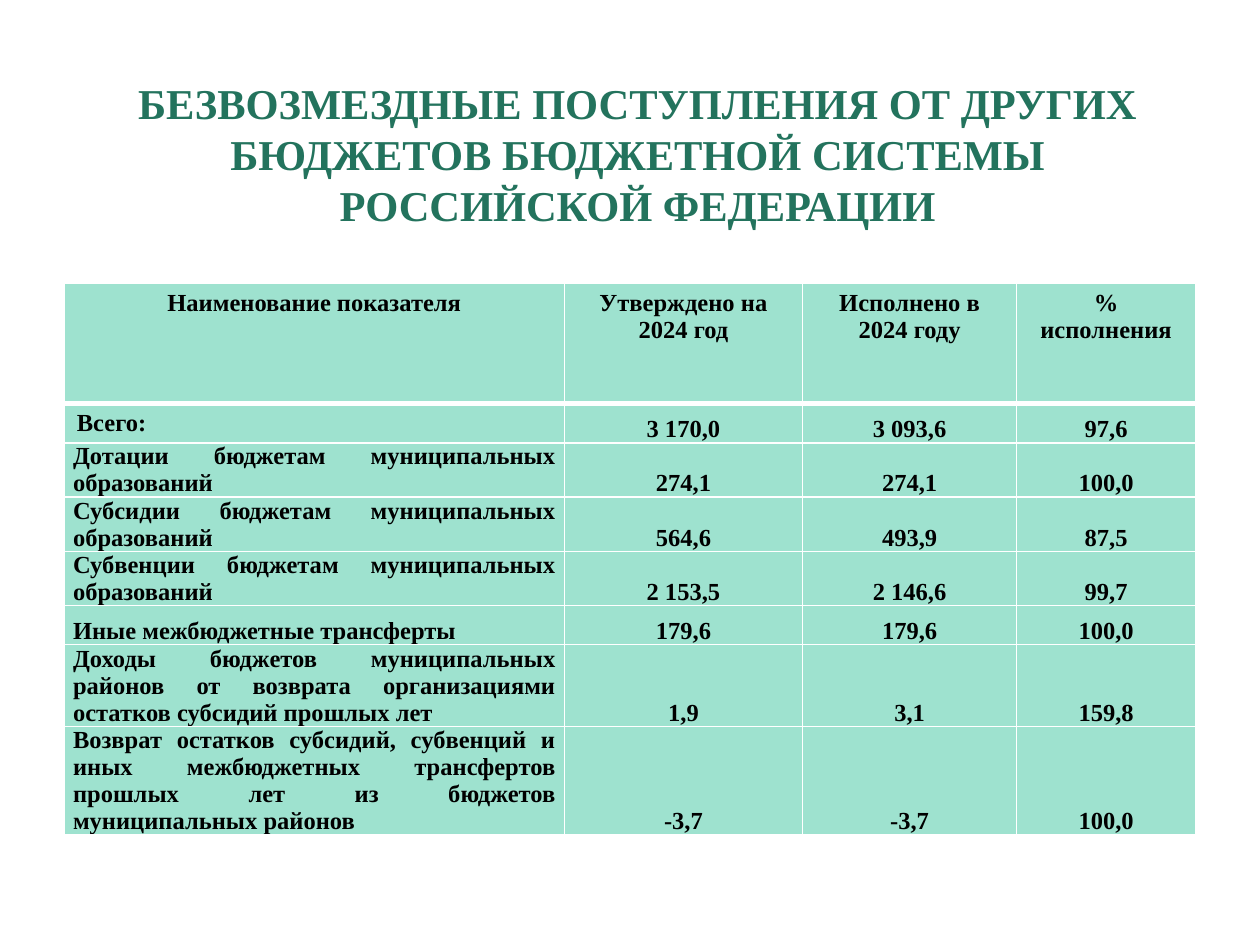
from typing import NamedTuple

from lxml import etree
from pptx import Presentation
from pptx.dml.color import RGBColor
from pptx.enum.text import MSO_ANCHOR, PP_ALIGN
from pptx.oxml.ns import qn
from pptx.util import Inches, Pt

CENTER, JUSTIFY, LEFT = PP_ALIGN.CENTER, PP_ALIGN.JUSTIFY, PP_ALIGN.LEFT
TOP, MIDDLE, BOTTOM = MSO_ANCHOR.TOP, MSO_ANCHOR.MIDDLE, MSO_ANCHOR.BOTTOM
TITLE_ONLY = 5
FONT = "Times New Roman"
COLORS = {"title": "23735D", "cell": "9EE2CF", "text": "000000", "border": "FFFFFF"}
COLUMN_WIDTHS = (3.97, 1.89, 1.7, 1.42)
TITLE = "БЕЗВОЗМЕЗДНЫЕ ПОСТУПЛЕНИЯ ОТ ДРУГИХ БЮДЖЕТОВ БЮДЖЕТНОЙ СИСТЕМЫ РОССИЙСКОЙ ФЕДЕРАЦИИ"


class BudgetRow(NamedTuple):
    height: float
    texts: tuple[str, str, str, str]


ROWS = (
    BudgetRow(0.95, ("Наименование показателя", "Утверждено на 2024 год",
                     "Исполнено в 2024 году", "% исполнения")),
    BudgetRow(0.31, ("Всего:", "3 170,0", "3 093,6", "97,6")),
    BudgetRow(0.43, ("Дотации бюджетам муниципальных образований", "274,1", "274,1", "100,0")),
    BudgetRow(0.43, ("Субсидии бюджетам муниципальных образований", "564,6", "493,9", "87,5")),
    BudgetRow(0.43, ("Субвенции бюджетам муниципальных образований",
                     "2 153,5", "2 146,6", "99,7")),
    BudgetRow(0.31, ("Иные межбюджетные трансферты", "179,6", "179,6", "100,0")),
    BudgetRow(0.65, ("Доходы бюджетов муниципальных районов от возврата организациями "
                     "остатков субсидий прошлых лет", "1,9", "3,1", "159,8")),
    BudgetRow(0.86, ("Возврат остатков субсидий, субвенций и иных межбюджетных трансфертов "
                     "прошлых лет из бюджетов муниципальных районов", "-3,7", "-3,7", "100,0")),
)


def format_font(paragraph, size: float, color: str) -> None:
    font = paragraph.font
    font.name, font.size, font.bold = FONT, Pt(size), True
    font.color.rgb = RGBColor.from_string(COLORS[color])


def set_borders(cell, row: int) -> None:
    """Thin white edges, with a thick rule between the header and the body."""
    properties = cell._tc.get_or_add_tcPr()
    widths = {"a:lnL": 1, "a:lnR": 1, "a:lnT": 3 if row == 1 else 1, "a:lnB": 3 if row == 0 else 1}
    for position, (tag, width) in enumerate(widths.items()):
        line = etree.Element(qn(tag), w=str(Pt(width)))
        fill = etree.SubElement(line, qn("a:solidFill"))
        etree.SubElement(fill, qn("a:srgbClr"), val=COLORS["border"])
        properties.insert(position, line)


def fill_cell(cell, text: str, row: int, column: int) -> None:
    cell.text = text
    paragraph = cell.text_frame.paragraphs[0]
    format_font(paragraph, 14, "text")
    paragraph.alignment = CENTER
    if column == 0 and row > 0:
        paragraph.alignment = LEFT if row == 1 else JUSTIFY
    cell.vertical_anchor = TOP
    if row > 1 or (row == 1 and column > 0):
        cell.vertical_anchor = BOTTOM
        cell.margin_left = cell.margin_right = Inches(0.07)
        cell.margin_top = cell.margin_bottom = 0
    cell.fill.solid()
    cell.fill.fore_color.rgb = RGBColor.from_string(COLORS["cell"])
    set_borders(cell, row)


def add_title(slide) -> None:
    title = slide.shapes.title
    title.left, title.top, title.width, title.height = map(Inches, (0.46, 0.57, 9, 1.3))
    frame = title.text_frame
    frame.text = TITLE
    frame.word_wrap = True
    frame.vertical_anchor = MIDDLE
    paragraph = frame.paragraphs[0]
    paragraph.alignment = CENTER
    paragraph.line_spacing = Pt(29.1)
    paragraph._p.get_or_add_pPr().set("marL", str(Inches(0.2)))
    format_font(paragraph, 24.3, "title")


def add_budget_table(slide) -> None:
    height = sum(row.height for row in ROWS)
    frame = slide.shapes.add_table(len(ROWS), len(COLUMN_WIDTHS), Inches(0.51), Inches(2.25),
                                   Inches(sum(COLUMN_WIDTHS)), Inches(height))
    table = frame.table
    for column, width in enumerate(COLUMN_WIDTHS):
        table.columns[column].width = Inches(width)
    for row, record in enumerate(ROWS):
        table.rows[row].height = Inches(record.height)
        for column, text in enumerate(record.texts):
            fill_cell(table.cell(row, column), text, row, column)


def main() -> None:
    presentation = Presentation()
    presentation.slide_width, presentation.slide_height = Inches(10), Inches(7.5)
    slide = presentation.slides.add_slide(presentation.slide_layouts[TITLE_ONLY])
    add_title(slide)
    add_budget_table(slide)
    presentation.save("out.pptx")


if __name__ == "__main__":
    main()
